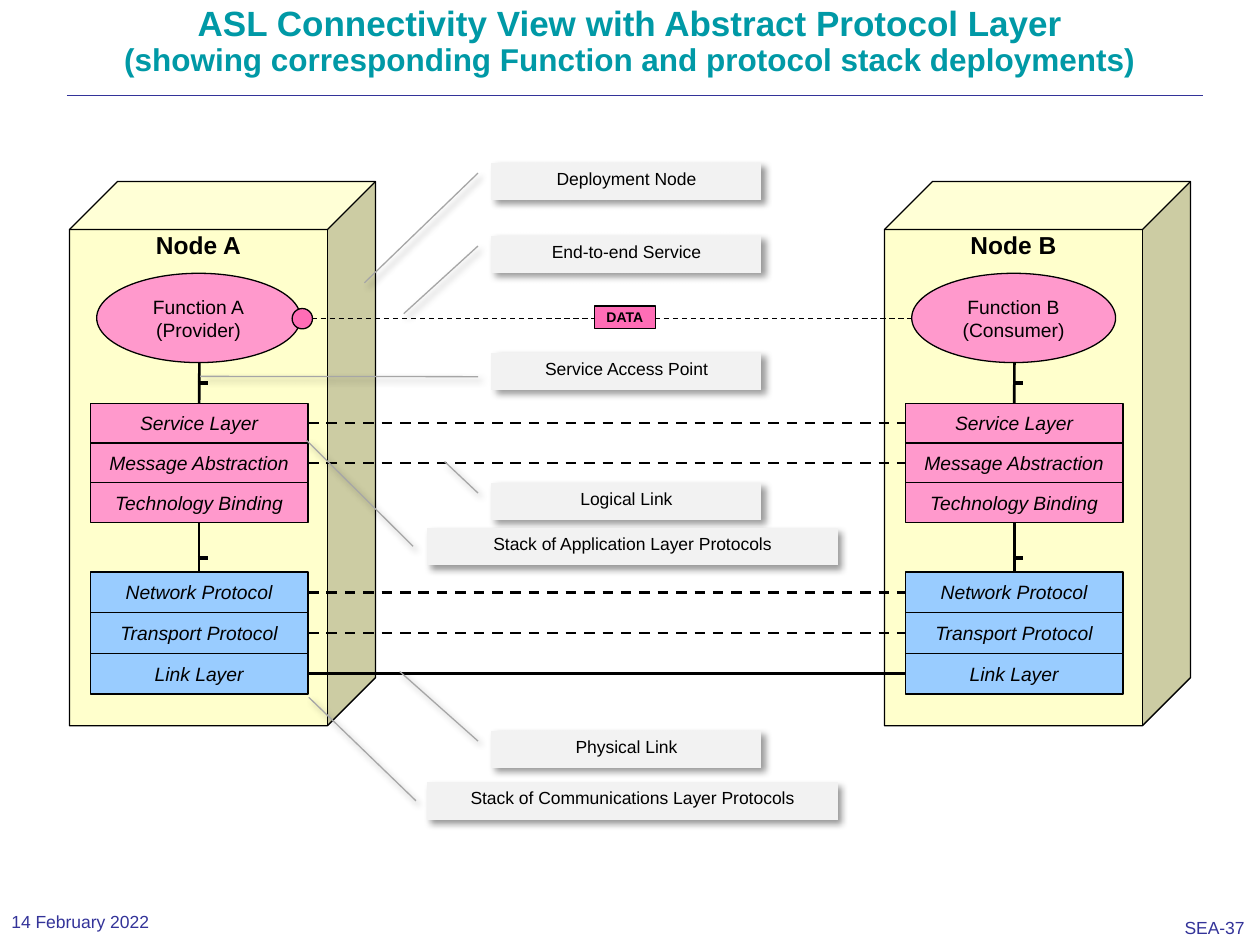
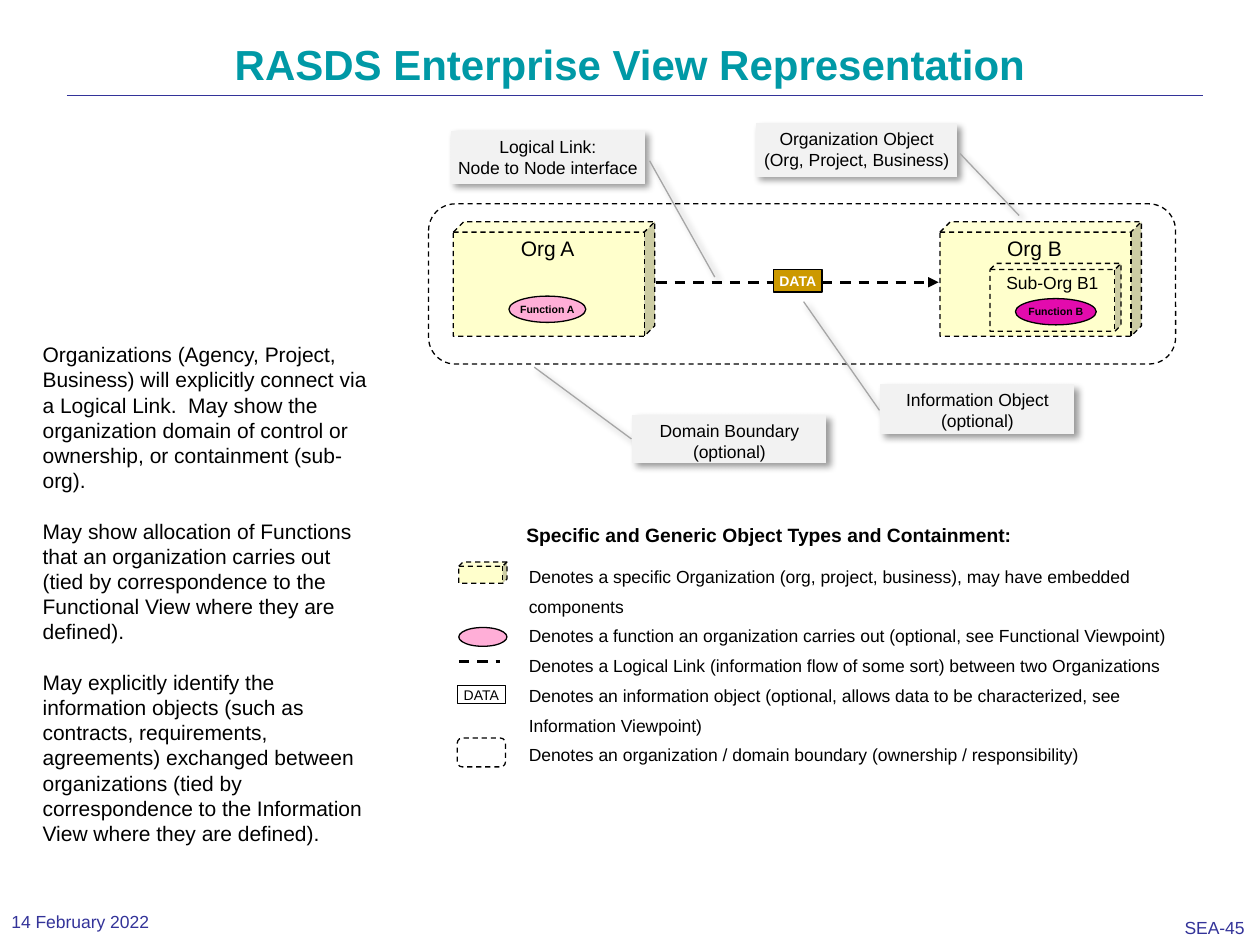
"""Build two slides on the ASL connectivity and RASDS enterprise views."""
from dataclasses import dataclass
from typing import Optional

from lxml.etree import SubElement
from pptx import Presentation
from pptx.dml.color import RGBColor
from pptx.enum.dml import MSO_LINE
from pptx.enum.shapes import MSO_CONNECTOR, MSO_SHAPE
from pptx.enum.text import MSO_ANCHOR, PP_ALIGN
from pptx.oxml.ns import qn
from pptx.util import Cm, Pt

COLORS = {
    "title": "0099A6", "footer": "333399", "ink": "000000", "paper": "FFFFFF",
    "node": "FFFFCC", "application": "FF99CC", "communication": "99CCFF",
    "port": "FF6DB6", "data": "CC9900", "callout": "F2F2F2", "leader": "A6A6A6",
    "function_a": "FFAED7", "function_b": "E30BAD",
}
FONT = "Arial"
TIGHT = (0.05, 0.05)
SNUG = (0, 0.13)


@dataclass(frozen=True)
class Box:
    """A place on the slide in centimetres."""
    left: float
    top: float
    width: float
    height: float


@dataclass(frozen=True)
class Callout:
    """A labelled note with the four adjustments of its leader line."""
    text: str
    box: Box
    leader: tuple[float, float, float, float]


@dataclass(frozen=True)
class Node:
    """A deployment node with the function it hosts."""
    name: str
    function: str
    left: float


@dataclass(frozen=True)
class Layer:
    """A protocol layer and the weight and dash of its link, if any."""
    name: str
    top: float
    height: float
    color: str
    linked: bool = True
    dashed: bool = True


@dataclass(frozen=True)
class Piece:
    """A drawn object of the enterprise view."""
    kind: MSO_SHAPE
    box: Box
    fill: Optional[str]
    dashed: bool = False
    adjust: Optional[float] = None


NODES = [Node("Node A", "Function A\n(Provider)", 1.4),
         Node("Node B", "Function B\n(Consumer)", 17.83)]
LAYERS = [
    *(Layer(name, 8.13 + 0.8 * row, 0.8, "application", linked=row < 2)
      for row, name in enumerate(
          ["Service Layer", "Message Abstraction", "Technology Binding"])),
    *(Layer(name, 11.53 + 0.82 * row, 0.82, "communication", dashed=row < 2)
      for row, name in enumerate(
          ["Network Protocol", "Transport Protocol", "Link Layer"])),
]


def narrow(top: float) -> Box:
    """Place a one-phrase callout."""
    return Box(9.91, top, 5.44, 0.76)


def wide(top: float) -> Box:
    """Place a callout that names a whole stack."""
    return Box(8.61, top, 8.28, 0.76)


CONNECTIVITY_CALLOUTS = [
    Callout("Physical Link", narrow(14.73), (0.277, 1.05, -1.569, 1.34)),
    Callout("Logical Link", narrow(9.73), (0.277, 1.05, -0.56, 1.174)),
    Callout("End-to-end Service", narrow(4.75), (0.277, 1.05, 2.071, 1.325)),
    Callout("Stack of Communications Layer Protocols", wide(15.77),
            (0.493, 1.027, -2.254, 1.288)),
    Callout("Stack of Application Layer Protocols", wide(10.64),
            (0.493, 1.034, -2.326, 1.294)),
    Callout("Service Access Point", narrow(7.11), (0.637, 1.05, 0.629, 2.08)),
    Callout("Deployment Node", narrow(3.28), (0.277, 1.05, 3.188, 1.471)),
]
ENTERPRISE_CALLOUTS = [
    Callout("Logical Link:\nNode to Node interface", Box(9.09, 2.64, 3.91, 1.07),
            (0.563, -0.025, 2.754, -0.361)),
    Callout("Domain Boundary\n(optional)", Box(12.75, 8.36, 3.91, 0.97),
            (0.506, 1.005, -0.987, 1.506)),
    Callout("Organization Object\n(Org, Project, Business)",
            Box(15.24, 2.49, 4.06, 1.07), (0.569, -0.014, 1.734, -0.307)),
    Callout("Information Object\n(optional)", Box(17.75, 7.75, 3.91, 0.99),
            (0.529, 1.005, -1.685, 1.396)),
]
ENTERPRISE_PIECES = [
    Piece(MSO_SHAPE.CUBE, Box(9.14, 4.47, 4.06, 2.31), "node", True, 0.091),
    Piece(MSO_SHAPE.CUBE, Box(18.95, 4.47, 4.06, 2.31), "node", True, 0.091),
    Piece(MSO_SHAPE.CUBE, Box(19.96, 5.31, 2.64, 1.37), "node", True, 0.091),
    Piece(MSO_SHAPE.ROUNDED_RECTANGLE, Box(8.64, 4.11, 15.06, 3.23), None, True),
    Piece(MSO_SHAPE.CUBE, Box(9.25, 11.33, 0.97, 0.43), "node", True, 0.199),
    Piece(MSO_SHAPE.OVAL, Box(9.25, 12.65, 0.97, 0.38), "function_a"),
    Piece(MSO_SHAPE.ROUNDED_RECTANGLE, Box(9.22, 14.88, 0.97, 0.58), "paper", True),
]
ORG_LABELS = [("Org A", Box(10.24, 4.62, 1.6, 0.76), 12),
              ("Org B", Box(20.04, 4.62, 1.63, 0.76), 12),
              ("Sub-Org B1", Box(20.02, 5.36, 2.39, 0.69), 10)]
ORG_FUNCTIONS = [("Function A", Box(10.26, 5.97, 1.55, 0.53), "function_a"),
                 ("Function B", Box(20.47, 6.02, 1.63, 0.53), "function_b")]
LEGEND = """Denotes a specific Organization (org, project, business), may have embedded components
Denotes a function an organization carries out (optional, see Functional Viewpoint)
Denotes a Logical Link (information flow of some sort) between two Organizations
Denotes an information object (optional, allows data to be characterized, see Information Viewpoint)
Denotes an organization / domain boundary (ownership / responsibility)"""
NOTES = "\n".join([
    "Organizations (Agency, Project, Business) will explicitly connect via a Logical "
    "Link.  May show the organization domain of control or ownership, or containment "
    "(sub-org).",
    "May show allocation of Functions that an organization carries out (tied by "
    "correspondence to the Functional View where they are defined).",
    "May explicitly identify the information objects (such as contracts, requirements, "
    "agreements) exchanged between organizations (tied by correspondence to the "
    "Information View where they are defined).",
])


def rgb(name: str) -> RGBColor:
    """Look up a colour by its role."""
    return RGBColor.from_string(COLORS[name])


def place(box: Box) -> tuple:
    """Turn a box into slide lengths."""
    return Cm(box.left), Cm(box.top), Cm(box.width), Cm(box.height)


def write(shape, text: str, *, size: float, color: str = "ink", bold: bool = False,
          italic: bool = False, align=PP_ALIGN.CENTER, anchor=MSO_ANCHOR.TOP,
          margins: tuple = (0.25, 0.13), wrap: bool = True, spacing=None, gap: float = 0):
    """Fill a shape with one paragraph per line of text."""
    frame = shape.text_frame
    frame.word_wrap, frame.vertical_anchor = wrap, anchor
    frame.margin_left = frame.margin_right = Cm(margins[0])
    frame.margin_top = frame.margin_bottom = Cm(margins[1])
    for index, line in enumerate(text.split("\n")):
        paragraph = frame.add_paragraph() if index else frame.paragraphs[0]
        paragraph.alignment = align
        if spacing:
            paragraph.line_spacing = spacing
        if index and gap:
            paragraph.space_before = Pt(gap)
        run = paragraph.add_run()
        run.text = line
        font = run.font
        font.name, font.size, font.bold, font.italic = FONT, Pt(size), bold, italic
        font.color.rgb = rgb(color)
    return frame


def label(slide, text: str, box: Box, **style):
    """Add a text box."""
    return write(slide.shapes.add_textbox(*place(box)), text, **style)


def draw(slide, kind: MSO_SHAPE, box: Box, fill: Optional[str], *, line: str = "ink",
         dashed: bool = False, adjust: tuple = ()):
    """Add a flat outlined preset shape."""
    shape = slide.shapes.add_shape(kind, *place(box))
    shape.shadow.inherit = False
    if fill:
        shape.fill.solid()
        shape.fill.fore_color.rgb = rgb(fill)
    else:
        shape.fill.background()
    shape.line.color.rgb = rgb(line)
    shape.line.width = Pt(0.75)
    if dashed:
        shape.line.dash_style = MSO_LINE.DASH
    for index, value in enumerate(adjust):
        shape.adjustments[index] = value
    return shape


def connect(slide, start: tuple, end: tuple, *, width: float = 1.5, color: str = "ink",
            dashed: bool = False, arrow: bool = False):
    """Add a straight line without a shadow."""
    link = slide.shapes.add_connector(
        MSO_CONNECTOR.STRAIGHT, *(Cm(value) for value in (*start, *end)))
    link.line.color.rgb = rgb(color)
    link.line.width = Pt(width)
    if dashed:
        link.line.dash_style = MSO_LINE.DASH
    properties = link.element.spPr
    if arrow:
        SubElement(properties.find(qn("a:ln")), qn("a:tailEnd"), type="triangle")
    SubElement(properties, qn("a:effectLst"))
    return link


def add_callout(slide, callout: Callout) -> None:
    """Add a shadowed note with its leader line."""
    note = draw(slide, MSO_SHAPE.LINE_CALLOUT_1_NO_BORDER, callout.box, "callout",
                line="leader", adjust=callout.leader)
    properties = note.element.spPr
    properties.find(qn("a:xfrm")).set("flipH", "1")
    shadow = SubElement(properties.find(qn("a:effectLst")), qn("a:outerShdw"),
                        blurRad=str(Pt(4)), dist=str(Pt(3)), dir="2700000",
                        algn="tl", rotWithShape="0")
    tone = SubElement(shadow, qn("a:srgbClr"), val=COLORS["ink"])
    SubElement(tone, qn("a:alpha"), val="40000")
    write(note, callout.text, size=10, margins=(0.1, 0.1))


def add_data(slide, box: Box, fill: str, color: str) -> None:
    """Add the information object that travels on a link."""
    data = draw(slide, MSO_SHAPE.RECTANGLE, box, fill)
    write(data, "DATA", size=8, bold=True, color=color, margins=TIGHT)


def start_slide(deck, title: str, title_top: float, title_size: float, number: str):
    """Add a slide with its rule, title and footers."""
    slide = deck.slides.add_slide(deck.slide_layouts[6])
    connect(slide, (1.35, 1.91), (24.26, 1.91), width=0.13, color="footer")
    footer = dict(size=10, color="footer", align=PP_ALIGN.LEFT, wrap=False)
    label(slide, number, Box(23.65, 18.39, 1.73, 0.66), margins=(0.23, 0.1), **footer)
    label(slide, "14 February 2022", Box(0, 18.21, 4.8, 0.74), margins=(0.23, 0.13),
          anchor=MSO_ANCHOR.MIDDLE, **footer)
    heading = label(slide, title, Box(1.27, title_top, 22.86, 3.18), size=title_size,
                    color="title", bold=True, spacing=0.9)
    for subtitle in heading.paragraphs[1:]:
        subtitle.runs[0].font.size = Pt(18)
    return slide


def add_node(slide, node: Node) -> list:
    """Add a node with its function and protocol stack, and return the layers."""
    cube = draw(slide, MSO_SHAPE.CUBE, Box(node.left, 3.66, 6.17, 10.97), "node",
                adjust=(0.157,))
    write(cube, node.name, size=14, bold=True, margins=(0.25, 0), wrap=False)
    function = draw(slide, MSO_SHAPE.OVAL, Box(node.left + 0.55, 5.51, 4.11, 1.8),
                    "application")
    write(function, node.function, size=11, anchor=MSO_ANCHOR.MIDDLE, margins=SNUG)
    stack = []
    for layer in LAYERS:
        tile = draw(slide, MSO_SHAPE.RECTANGLE,
                    Box(node.left + 0.42, layer.top, 4.39, layer.height), layer.color)
        write(tile, layer.name, size=11, italic=True, anchor=MSO_ANCHOR.MIDDLE,
              margins=TIGHT)
        stack.append(tile)
    middle = node.left + 2.62
    connect(slide, (middle, 7.31), (middle, 8.13)).end_connect(stack[0], 0)
    stem = connect(slide, (middle, 10.53), (middle, 11.53))
    stem.begin_connect(stack[2], 2)
    stem.end_connect(stack[3], 0)
    for access_point in (7.72, 11.24):
        connect(slide, (middle - 0.03, access_point), (middle + 0.17, access_point),
                width=2.25)
    return stack


def build_connectivity(deck) -> None:
    """Build the connectivity view."""
    slide = start_slide(
        deck, "ASL Connectivity View with Abstract Protocol Layer\n"
        "(showing corresponding Function and protocol stack deployments)", 0, 20, "SEA-37")
    provider, consumer = [add_node(slide, node) for node in NODES]
    for layer, near, far in zip(LAYERS, provider, consumer):
        if layer.linked:
            middle = layer.top + layer.height / 2
            link = connect(slide, (6.21, middle), (18.25, middle), dashed=layer.dashed)
            link.begin_connect(near, 3)
            link.end_connect(far, 1)
    connect(slide, (6.1, 6.42), (18.36, 6.42), width=0.75, dashed=True)
    draw(slide, MSO_SHAPE.OVAL, Box(5.89, 6.22, 0.41, 0.41), "port")
    add_data(slide, Box(11.99, 6.17, 1.22, 0.45), "port", "ink")
    for callout in CONNECTIVITY_CALLOUTS:
        add_callout(slide, callout)


def build_enterprise(deck) -> None:
    """Build the enterprise view."""
    slide = start_slide(deck, "RASDS Enterprise View Representation", 0.76, 24, "SEA-45")
    for piece in ENTERPRISE_PIECES:
        draw(slide, piece.kind, piece.box, piece.fill, dashed=piece.dashed,
             adjust=(piece.adjust,) if piece.adjust else ())
    connect(slide, (13.23, 5.69), (18.92, 5.69), dashed=True, arrow=True)
    add_data(slide, Box(15.6, 5.44, 0.97, 0.45), "data", "paper")
    for name, box, size in ORG_LABELS:
        label(slide, name, box, size=size, wrap=False)
    for name, box, fill in ORG_FUNCTIONS:
        write(draw(slide, MSO_SHAPE.OVAL, box, fill), name, size=6, bold=True,
              anchor=MSO_ANCHOR.MIDDLE, wrap=False)
    connect(slide, (9.25, 13.34), (10.08, 13.34), dashed=True)
    write(draw(slide, MSO_SHAPE.RECTANGLE, Box(9.22, 13.82, 0.97, 0.36), "paper"), "DATA",
          size=8, anchor=MSO_ANCHOR.MIDDLE, margins=SNUG)
    label(slide, "Specific and Generic Object Types and Containment:",
          Box(10.36, 10.41, 10.39, 0.74), size=11, bold=True, align=PP_ALIGN.LEFT,
          wrap=False)
    label(slide, LEGEND, Box(10.41, 11.1, 14.12, 4.42), size=10, align=PP_ALIGN.LEFT,
          spacing=Pt(17))
    label(slide, NOTES, Box(0.61, 6.76, 7.04, 11.02), size=12, align=PP_ALIGN.LEFT,
          gap=14.4)
    for callout in ENTERPRISE_CALLOUTS:
        add_callout(slide, callout)


def main() -> None:
    """Build and save the deck."""
    deck = Presentation()
    deck.slide_width, deck.slide_height = Cm(25.4), Cm(19.05)
    build_connectivity(deck)
    build_enterprise(deck)
    deck.save("out.pptx")


if __name__ == "__main__":
    main()
